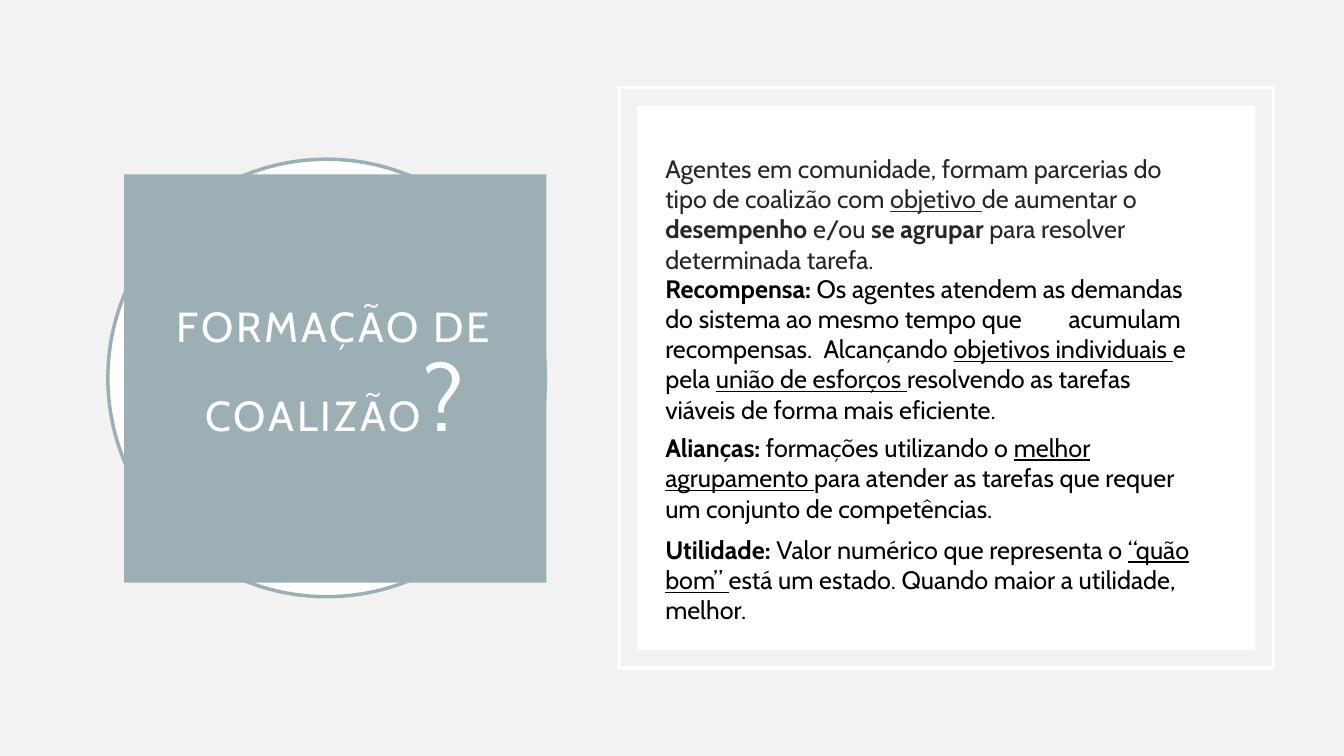
from dataclasses import dataclass

import pptx
import pptx.dml.color
import pptx.enum.shapes
import pptx.enum.text
import pptx.util

Inches = pptx.util.Inches
Pt = pptx.util.Pt
Shapes = pptx.enum.shapes.MSO_SHAPE
Anchor = pptx.enum.text.MSO_ANCHOR
FONT = "Cabin"
COLORS = {
    "background": "F2F2F2",
    "white": "FFFFFF",
    "slate": "9BAFB5",
    "charcoal": "262626",
    "black": "000000",
}


@dataclass(frozen=True)
class Span:
    text: str
    bold: bool = False
    underline: bool = False
    size: float = 18
    tracking: float = 0


@dataclass(frozen=True)
class Panel:
    kind: Shapes
    left: float
    top: float
    width: float
    height: float
    fill: str | None = None
    line: str | None = None


@dataclass(frozen=True)
class Note:
    top: float
    width: float
    height: float
    spans: tuple[Span, ...]
    color: str = "black"
    top_inset: float = 0.05


NOTES_LEFT = 6.5
CIRCLE = Panel(Shapes.OVAL, 1.07, 1.58, 4.34, 4.34, "white", "slate")
TITLE_BLOCK = Panel(Shapes.RECTANGLE, 1.23, 1.73, 4.19, 4.05, "slate")
FRAME = Panel(Shapes.RECTANGLE, 6.14, 0.87, 6.49, 5.76, line="white")
CARD = Panel(Shapes.RECTANGLE, 6.32, 1.05, 6.13, 5.4, "white")
TITLE = (
    Span("FORMAÇÃO DE COALIZÃO", size=30, tracking=2),
    Span("?", size=66, tracking=2),
)
NOTES = (
    Note(1.28, 5.34, 1.97, (
        Span("Agentes em comunidade, formam parcerias do tipo de coalizão com "),
        Span("objetivo ", underline=True),
        Span("de aumentar o "),
        Span("desempenho", bold=True),
        Span(" e/ou "),
        Span("se agrupar ", bold=True),
        Span("para resolver determinada tarefa."),
    ), "charcoal", 0.24),
    Note(2.66, 5.44, 1.92, (
        Span("Recompensa:", bold=True),
        Span(" Os agentes atendem as demandas do sistema ao mesmo tempo que "
             "\tacumulam recompensas.  Alcançando "),
        Span("objetivos individuais ", underline=True),
        Span("e pela "),
        Span("união de esforços ", underline=True),
        Span("resolvendo as tarefas viáveis de forma mais eficiente."),
    )),
    Note(4.24, 5.34, 1.01, (
        Span("Alianças: ", bold=True),
        Span("formações utilizando o "),
        Span("melhor agrupamento ", underline=True),
        Span("para atender as tarefas que requer um conjunto de competências."),
    )),
    Note(5.25, 5.44, 1.31, (
        Span("Utilidade: ", bold=True),
        Span("Valor numérico que representa o "),
        Span("“quão bom” ", underline=True),
        Span("está um estado. Quando maior a utilidade, melhor."),
    )),
)


def color(name: str) -> pptx.dml.color.RGBColor:
    return pptx.dml.color.RGBColor.from_string(COLORS[name])


def add_panel(page, panel: Panel):
    shape = page.shapes.add_shape(
        panel.kind, Inches(panel.left), Inches(panel.top),
        Inches(panel.width), Inches(panel.height),
    )
    shape.shadow.inherit = False
    if panel.fill:
        shape.fill.solid()
        shape.fill.fore_color.rgb = color(panel.fill)
    else:
        shape.fill.background()
    if panel.line:
        shape.line.color.rgb = color(panel.line)
        shape.line.width = Pt(2.5)
    else:
        shape.line.fill.background()
    return shape


def add_spans(para, spans: tuple[Span, ...], color_name: str) -> None:
    for span in spans:
        run = para.add_run()
        run.text = span.text
        run.font.name = FONT
        run.font.size = Pt(span.size)
        run.font.bold = span.bold
        run.font.underline = span.underline
        run.font.color.rgb = color(color_name)
        if span.tracking:
            run._r.get_or_add_rPr().set("spc", str(round(span.tracking * 100)))


def add_title(page) -> None:
    frame = add_panel(page, TITLE_BLOCK).text_frame
    frame.word_wrap = True
    frame.vertical_anchor = Anchor.MIDDLE
    frame.margin_left = frame.margin_right = Inches(0.2)
    frame.margin_top = frame.margin_bottom = Inches(0.2)
    para = frame.paragraphs[0]
    para.alignment = pptx.enum.text.PP_ALIGN.CENTER
    para.line_spacing = 0.9
    add_spans(para, TITLE, "white")


def add_note(page, note: Note) -> None:
    box = page.shapes.add_textbox(
        Inches(NOTES_LEFT), Inches(note.top), Inches(note.width), Inches(note.height)
    )
    frame = box.text_frame
    frame.word_wrap = True
    frame.vertical_anchor = Anchor.TOP
    frame.margin_top = Inches(note.top_inset)
    add_spans(frame.paragraphs[0], note.spans, note.color)


def main() -> None:
    """Build the coalition formation slide."""
    deck = pptx.Presentation()
    deck.slide_width = Inches(13.33)
    deck.slide_height = Inches(7.5)
    page = deck.slides.add_slide(deck.slide_layouts[6])
    page.background.fill.solid()
    page.background.fill.fore_color.rgb = color("background")
    add_panel(page, CIRCLE)
    add_title(page)
    for panel in (FRAME, CARD):
        add_panel(page, panel)
    for note in NOTES:
        add_note(page, note)
    deck.save("out.pptx")


if __name__ == "__main__":
    main()
